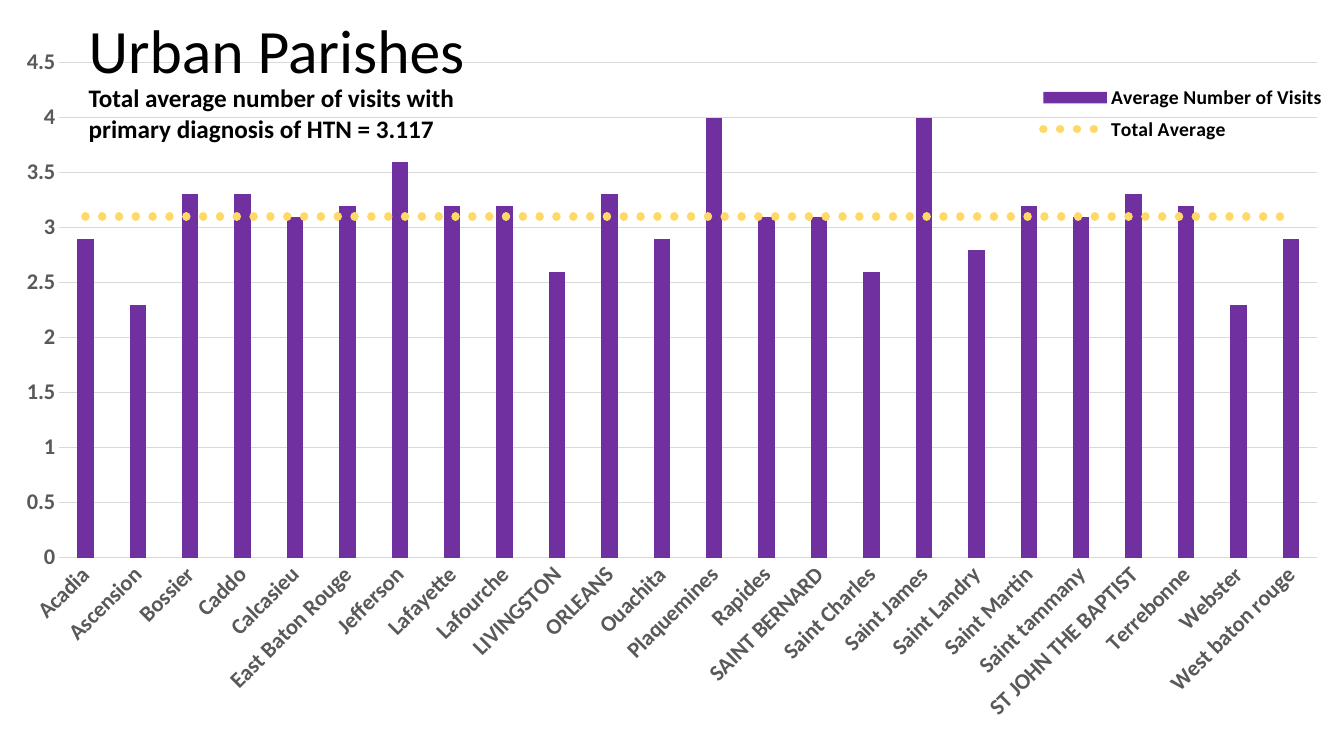
import pptx
import pptx.chart.data
import pptx.dml.color
import pptx.enum.chart
import pptx.enum.dml
import pptx.enum.text
import pptx.oxml
import pptx.oxml.ns
import pptx.util

PX = 9525  # EMU in one px; the slide is 1280 x 720 px
BLACK = pptx.dml.color.RGBColor(0x00, 0x00, 0x00)
GRAY = pptx.dml.color.RGBColor(0x59, 0x59, 0x59)
GRID = pptx.dml.color.RGBColor(0xD9, 0xD9, 0xD9)
PURPLE = pptx.dml.color.RGBColor(0x70, 0x30, 0xA0)
YELLOW = pptx.dml.color.RGBColor(0xFF, 0xD9, 0x66)

AVERAGE = 3.1
VISITS = {
    "Acadia": 2.9, "Ascension": 2.3, "Bossier": 3.3, "Caddo": 3.3,
    "Calcasieu": 3.1, "East Baton Rouge": 3.2, "Jefferson": 3.6,
    "Lafayette": 3.2, "Lafourche": 3.2, "LIVINGSTON": 2.6,
    "ORLEANS": 3.3, "Ouachita": 2.9, "Plaquemines": 4, "Rapides": 3.1,
    "SAINT BERNARD": 3.1, "Saint Charles": 2.6, "Saint James": 4,
    "Saint Landry": 2.8, "Saint Martin": 3.2, "Saint tammany": 3.1,
    "ST JOHN THE BAPTIST": 3.3, "Terrebonne": 3.2, "Webster": 2.3,
    "West baton rouge": 2.9,
}


class SlideBuilder:
    font = "Calibri"

    def __init__(self, prs):
        self.s = prs.slides.add_slide(prs.slide_layouts[6])

    def box(self, *lengths):
        return [n * PX for n in lengths]

    def style(self, font, size, color, bold):
        font.name = self.font
        font.size = pptx.util.Pt(size)
        font.bold = bold
        font.color.rgb = color

    def text(self, text, x, y, w, h, size, bold=False, spacing=None, middle=False):
        tf = self.s.shapes.add_textbox(*self.box(x, y, w, h)).text_frame
        tf.word_wrap = True
        if middle:
            tf.vertical_anchor = pptx.enum.text.MSO_ANCHOR.MIDDLE
        tf.text = text
        p = tf.paragraphs[0]
        p.line_spacing = spacing
        self.style(p.runs[0].font, size, BLACK, bold)

    def line(self, line, color, width):
        line.color.rgb = color
        line.width = pptx.util.Pt(width)

    def layout(self, parent, index, x, y, w, h, inner=False):
        """Place a chart part by fractions of the chart area."""
        for old in parent.xpath("c:layout"):
            parent.remove(old)
        target = '<c:layoutTarget val="inner"/>' if inner else ""
        parent.insert(index, pptx.oxml.parse_xml(
            f'<c:layout {pptx.oxml.ns.nsdecls("c")}><c:manualLayout>{target}'
            '<c:xMode val="edge"/><c:yMode val="edge"/>'
            f'<c:x val="{x}"/><c:y val="{y}"/><c:w val="{w}"/><c:h val="{h}"/>'
            '</c:manualLayout></c:layout>'))

    def move_to_line_plot(self, chart):
        """Turn the last column series into a line on the same axes."""
        bar = chart.element.xpath("c:chart/c:plotArea/c:barChart")[0]
        ser = bar.xpath("c:ser")[-1]
        for flag in ser.xpath("c:invertIfNegative"):
            ser.remove(flag)
        axes = "".join(f'<c:axId val="{v}"/>' for v in bar.xpath("c:axId/@val"))
        line = pptx.oxml.parse_xml(
            f'<c:lineChart {pptx.oxml.ns.nsdecls("c")}><c:grouping val="standard"/>'
            f'<c:varyColors val="0"/><c:marker val="1"/>{axes}</c:lineChart>')
        line.insert(2, ser)
        bar.addnext(line)

    def chart(self, x, y, w, h):
        data = pptx.chart.data.CategoryChartData()
        data.categories = list(VISITS)
        data.add_series("Average Number of Visits", list(VISITS.values()))
        data.add_series("Total Average", [AVERAGE] * len(VISITS))
        kind = pptx.enum.chart.XL_CHART_TYPE.COLUMN_CLUSTERED
        chart = self.s.shapes.add_chart(kind, *self.box(x, y, w, h), data).chart
        chart.has_title = False
        self.style(chart.font, 10, BLACK, False)
        self.move_to_line_plot(chart)

        # Columns and the dotted average line
        columns, average = chart.plots
        columns.gap_width, columns.overlap = 219, -27
        columns.vary_by_categories = False
        fill = columns.series[0].format.fill
        fill.solid()
        fill.fore_color.rgb = PURPLE
        ser = average.series[0]
        ser.smooth = False
        ser.marker.style = pptx.enum.chart.XL_MARKER_STYLE.NONE
        self.line(ser.format.line, YELLOW, 6)
        ser.format.line.dash_style = pptx.enum.dml.MSO_LINE.ROUND_DOT
        chart.element.xpath("//c:lineChart/c:ser/c:spPr/a:ln")[0].set("cap", "rnd")

        # Axes
        for axis in (chart.category_axis, chart.value_axis):
            axis.major_tick_mark = pptx.enum.chart.XL_TICK_MARK.NONE
            axis.minor_tick_mark = pptx.enum.chart.XL_TICK_MARK.NONE
            self.style(axis.tick_labels.font, 16, GRAY, True)
        self.line(chart.category_axis.format.line, GRID, 0.75)
        chart.element.xpath("//c:catAx/c:txPr/a:bodyPr")[0].set("rot", "-2700000")
        values = chart.value_axis
        values.minimum_scale, values.maximum_scale, values.major_unit = 0, 4.5, 0.5
        values.format.line.fill.background()
        values.has_major_gridlines = True
        self.line(values.major_gridlines.format.line, GRID, 0.75)
        values.tick_labels.number_format = "General"
        values.tick_labels.number_format_is_linked = False

        # Legend and plot placement
        chart.has_legend = True
        legend = chart.legend
        legend.position = pptx.enum.chart.XL_LEGEND_POSITION.BOTTOM
        legend.include_in_layout = False
        self.style(legend.font, 14, BLACK, True)
        self.layout(chart.element.xpath("//c:legend")[0], 1, 0.77, 0.06, 0.22, 0.095)
        self.layout(chart.element.xpath("//c:plotArea")[0], 0,
                    0.044, 0.039, 0.936, 0.667, inner=True)


def main():
    prs = pptx.Presentation()
    prs.slide_width, prs.slide_height = 1280 * PX, 720 * PX
    slide = SlideBuilder(prs)
    slide.chart(0, 32, 1280, 707)
    # Heading and summary
    slide.text("Urban Parishes", 75, 0, 1001, 102, 44, spacing=0.9, middle=True)
    slide.text("Total average number of visits with primary diagnosis of HTN = 3.117",
               75, 74, 401, 68, 18, bold=True)
    prs.save("out.pptx")


if __name__ == "__main__":
    main()
